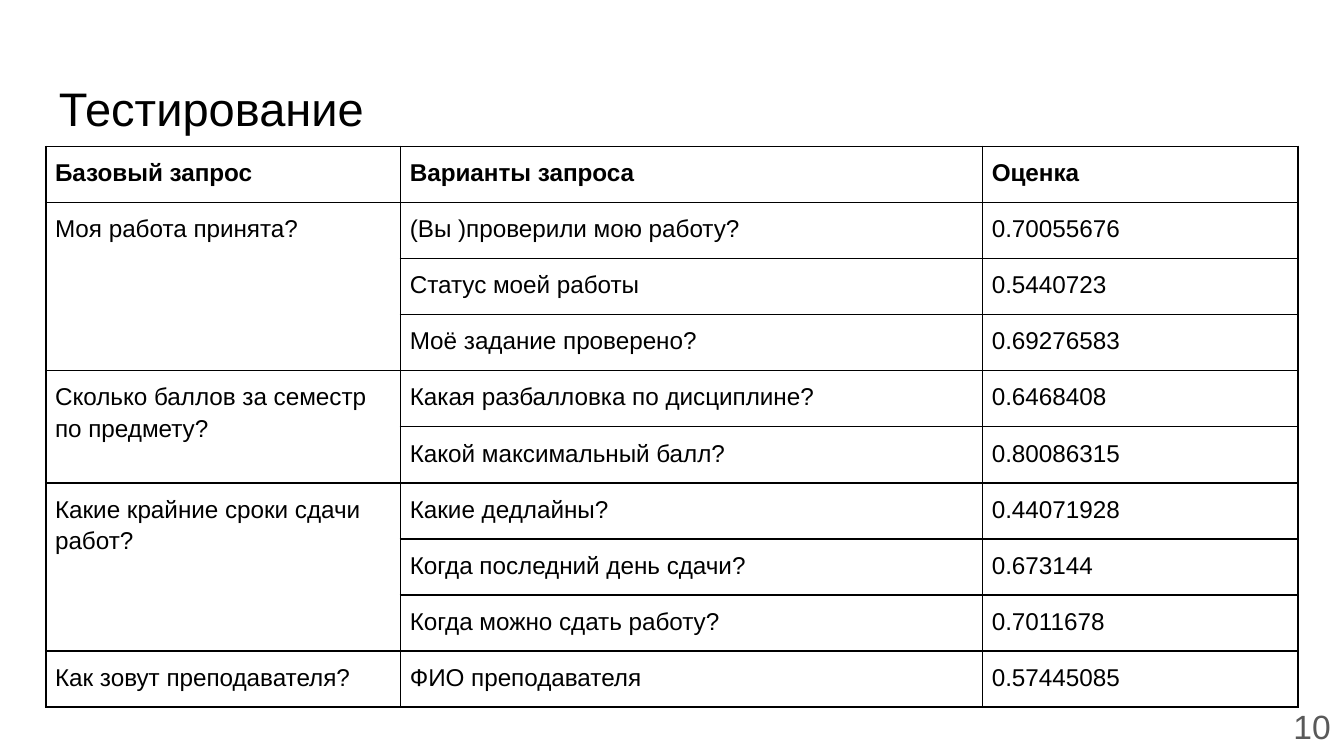
from lxml.etree import SubElement
from pptx import Presentation
from pptx.dml.color import RGBColor
from pptx.enum.text import MSO_ANCHOR, PP_ALIGN
from pptx.oxml.ns import qn
from pptx.util import Inches, Pt

BLACK, GREY = "000000", "595959"
HEAD = ["Базовый запрос", "Варианты запроса", "Оценка"]
# Each base query with its variants and their scores
GROUPS = [
    ("Моя работа принята?", [
        ("(Вы )проверили мою работу?", "0.70055676"),
        ("Статус моей работы", "0.5440723"),
        ("Моё задание проверено?", "0.69276583")]),
    ("Сколько баллов за семестр по предмету?", [
        ("Какая разбалловка по дисциплине?", "0.6468408"),
        ("Какой максимальный балл?", "0.80086315")]),
    ("Какие крайние сроки сдачи работ?", [
        ("Какие дедлайны?", "0.44071928"),
        ("Когда последний день сдачи?", "0.673144"),
        ("Когда можно сдать работу?", "0.7011678")]),
    ("Как зовут преподавателя?", [
        ("ФИО преподавателя", "0.57445085")]),
]


def paint(color):
    return RGBColor.from_string(color)


def add_run(par, text, size, color=BLACK, bold=False):
    run = par.add_run()
    run.text = text
    run.font.name = "Arial"
    run.font.size = Pt(size)
    run.font.bold = bold
    run.font.color.rgb = paint(color)


def add_label(slide, box, text, size, color=BLACK,
              align=PP_ALIGN.LEFT, anchor=MSO_ANCHOR.TOP):
    frame = slide.shapes.add_textbox(*map(Inches, box)).text_frame
    frame.word_wrap = True
    frame.vertical_anchor = anchor
    frame.margin_left = frame.margin_right = Inches(0.1)
    frame.margin_top = frame.margin_bottom = Inches(0.1)
    par = frame.paragraphs[0]
    par.alignment = align
    add_run(par, text, size, color)


def style_cell(cell):
    cell.margin_left = cell.margin_right = Inches(0.07)
    cell.margin_top = cell.margin_bottom = Inches(0.07)
    # Borders come before the fill in the cell properties
    props = cell._tc.get_or_add_tcPr()
    for side in ("a:lnL", "a:lnR", "a:lnT", "a:lnB"):
        line = SubElement(props, qn(side), w=str(Pt(1)))
        fill = SubElement(line, qn("a:solidFill"))
        SubElement(fill, qn("a:srgbClr"), val=BLACK)
    cell.fill.background()


def fill_cell(cell, text, bold=False):
    par = cell.text_frame.paragraphs[0]
    par.line_spacing = 1.15
    par.space_before = par.space_after = Pt(12)
    add_run(par, text, 13, bold=bold)


def add_scores(slide, box, widths):
    count = 1 + sum(len(items) for _, items in GROUPS)
    table = slide.shapes.add_table(count, len(HEAD), *map(Inches, box)).table
    table.first_row = table.horz_banding = False
    for col, width in zip(table.columns, widths):
        col.width = Inches(width)
    for row in table.rows:
        row.height = Inches(box[3] / count)
    for cell in table.iter_cells():
        style_cell(cell)

    # Header row
    for col, text in enumerate(HEAD):
        fill_cell(table.cell(0, col), text, bold=True)

    # One merged first cell for each group
    top = 1
    for query, items in GROUPS:
        first = table.cell(top, 0)
        if len(items) > 1:
            first.merge(table.cell(top + len(items) - 1, 0))
        fill_cell(first, query)
        for row, pair in enumerate(items, top):
            for col, text in enumerate(pair, 1):
                fill_cell(table.cell(row, col), text)
        top += len(items)


def main():
    deck = Presentation()
    # Widescreen, 16 to 9
    deck.slide_width = Inches(10)
    deck.slide_height = deck.slide_width * 9 // 16
    slide = deck.slides.add_slide(deck.slide_layouts[6])
    # Title
    add_label(slide, (0.34, 0.49, 9.32, 0.63), "Тестирование", 25.2)
    # Table of scores
    add_scores(slide, (0.34, 1.09, 9.32, 4.17), (2.64, 4.33, 2.35))
    # Page number
    add_label(slide, (9.4, 5.19, 0.6, 0.43), "10", 18, GREY,
              PP_ALIGN.RIGHT, MSO_ANCHOR.MIDDLE)
    deck.save("out.pptx")


if __name__ == "__main__":
    main()
